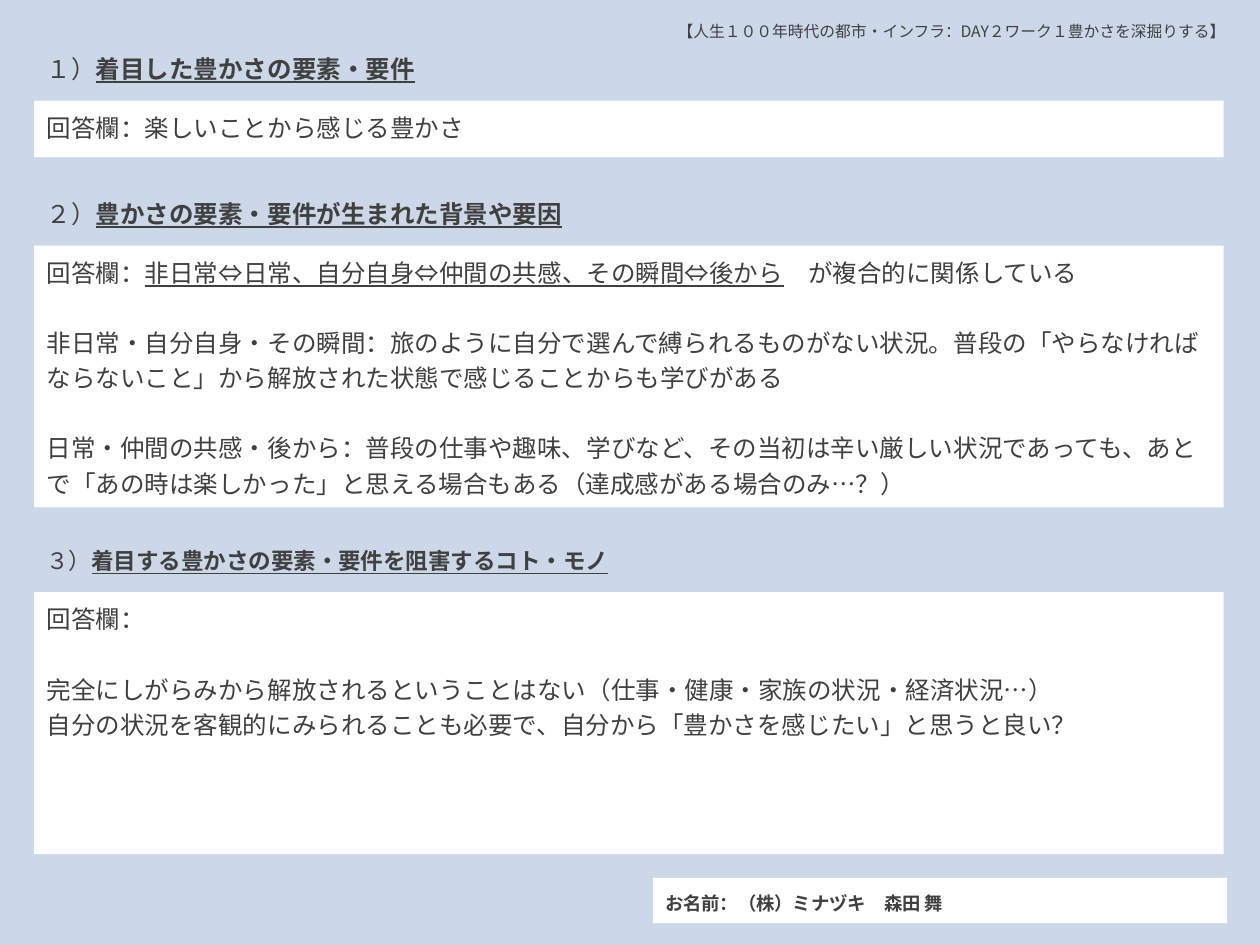
import dataclasses

import lxml.etree
import pptx
import pptx.dml.color
import pptx.enum.shapes
import pptx.enum.text
import pptx.oxml.ns
import pptx.util

Cm = pptx.util.Cm


@dataclasses.dataclass(frozen=True)
class Theme:
    font: str = "Noto Sans CJK JP"
    background: str = "CCD8E7"
    panel: str = "FFFFFF"
    text: str = "404040"
    body_size: float = 14
    small_heading_size: float = 12.9
    name_size: float = 10.5
    header_size: float = 9
    line_spacing: float = 1.2
    paragraph_gap: float = 20


class WorksheetSlide:
    def __init__(self, presentation, theme):
        self.theme = theme
        self.slide = presentation.slides.add_slide(presentation.slide_layouts[6])
        self.set_fill(self.slide.background.fill, theme.background)

    def set_fill(self, fill, color):
        fill.solid()
        fill.fore_color.rgb = pptx.dml.color.RGBColor.from_string(color)

    def add_text(self, shape, paragraphs, size, anchor=pptx.enum.text.MSO_ANCHOR.TOP):
        frame = shape.text_frame
        frame.word_wrap = True
        frame.vertical_anchor = anchor
        for index, (gap, runs) in enumerate(paragraphs):
            paragraph = frame.paragraphs[0] if index == 0 else frame.add_paragraph()
            paragraph_format = {
                "alignment": pptx.enum.text.PP_ALIGN.LEFT,
                "line_spacing": self.theme.line_spacing,
                "space_before": pptx.util.Pt(gap),
            }
            for name, value in paragraph_format.items():
                setattr(paragraph, name, value)
            for text, extra in runs:
                self.add_run(paragraph, text, size, extra)

    def add_run(self, paragraph, text, size, extra):
        run = paragraph.add_run()
        run.text = text
        font_format = {"name": self.theme.font, "size": pptx.util.Pt(size), **extra}
        for name, value in font_format.items():
            setattr(run.font, name, value)
        run.font.color.rgb = pptx.dml.color.RGBColor.from_string(self.theme.text)
        east_asian = lxml.etree.SubElement(
            run.font._element, pptx.oxml.ns.qn("a:ea"))
        east_asian.set("typeface", self.theme.font)

    def add_label(self, left, top, width, height, runs, size):
        shape = self.slide.shapes.add_textbox(Cm(left), Cm(top), Cm(width), Cm(height))
        self.add_text(shape, [(0, runs)], size)

    def add_heading(self, top, width, number, title, size):
        runs = [(number, {}), (title, {"bold": True, "underline": True})]
        self.add_label(0.69, top, width, 1.14, runs, size)

    def add_panel(self, left, top, width, height, paragraphs, size,
                  anchor=pptx.enum.text.MSO_ANCHOR.TOP):
        shape = self.slide.shapes.add_shape(
            pptx.enum.shapes.MSO_SHAPE.RECTANGLE,
            Cm(left), Cm(top), Cm(width), Cm(height))
        shape.shadow.inherit = False
        shape.line.fill.background()
        self.set_fill(shape.fill, self.theme.panel)
        self.add_text(shape, paragraphs, size, anchor)

    def add_answer(self, top, height, paragraphs):
        self.add_panel(0.69, top, 23.98, height, paragraphs, self.theme.body_size)


def main():
    theme = Theme()
    presentation = pptx.Presentation()
    presentation.slide_width = Cm(25.4)
    presentation.slide_height = Cm(19.05)
    worksheet = WorksheetSlide(presentation, theme)
    gap = theme.paragraph_gap

    header = "【人生１００年時代の都市・インフラ：DAY２ワーク１豊かさを深掘りする】"
    worksheet.add_label(13.41, 0.23, 12.27, 0.76, [(header, {})], theme.header_size)

    worksheet.add_heading(
        0.84, 8.15, "１）", "着目した豊かさの要素・要件", theme.body_size)
    worksheet.add_answer(2.03, 1.14, [
        (0, [("回答欄：楽しいことから感じる豊かさ", {})]),
    ])

    worksheet.add_heading(
        3.76, 12.12, "２）", "豊かさの要素・要件が生まれた背景や要因", theme.body_size)
    worksheet.add_answer(4.95, 5.28, [
        (0, [
            ("回答欄：", {}),
            ("非日常⇔日常、自分自身⇔仲間の共感、その瞬間⇔後から", {"underline": True}),
            ("　が複合的に関係している", {}),
        ]),
        (gap, [("非日常・自分自身・その瞬間：旅のように自分で選んで縛られるものがない状況。"
                "普段の「やらなければならないこと」から解放された状態で感じることからも学びがある", {})]),
        (gap, [("日常・仲間の共感・後から：普段の仕事や趣味、学びなど、その当初は辛い厳しい状況であっても、"
                "あとで「あの時は楽しかった」と思える場合もある（達成感がある場合のみ…？）", {})]),
    ])

    worksheet.add_heading(
        10.8, 12.29, "３）", "着目する豊かさの要素・要件を阻害するコト・モノ",
        theme.small_heading_size)
    worksheet.add_answer(11.94, 5.28, [
        (0, [("回答欄：", {})]),
        (gap, [("完全にしがらみから解放されるということはない（仕事・健康・家族の状況・経済状況…）", {})]),
        (0, [("自分の状況を客観的にみられることも必要で、自分から「豊かさを感じたい」と思うと良い？", {})]),
    ])

    worksheet.add_panel(
        13.16, 17.7, 11.58, 0.91,
        [(0, [("お名前：（株）ミナヅキ　森田 舞", {"bold": True})])],
        theme.name_size, pptx.enum.text.MSO_ANCHOR.MIDDLE)

    presentation.save("out.pptx")


if __name__ == "__main__":
    main()
